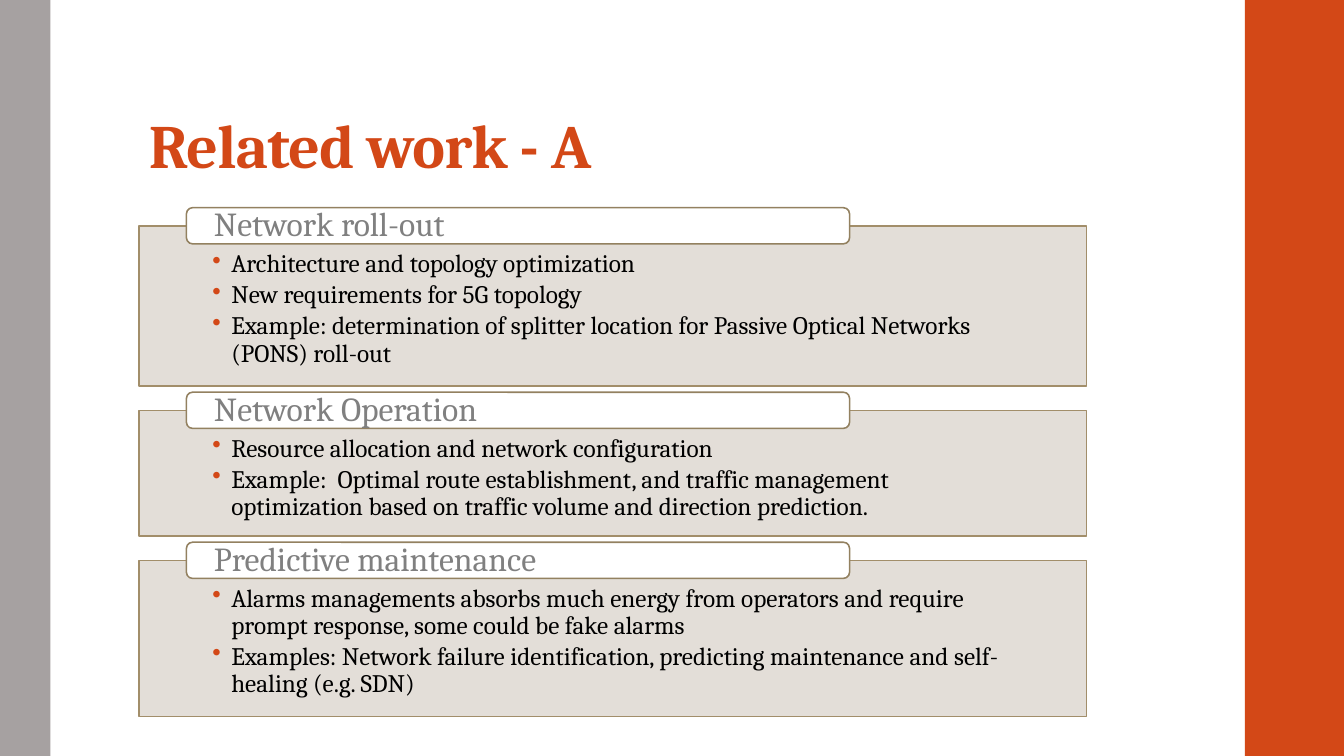
import dataclasses

import pptx
import pptx.dml.color
import pptx.enum.shapes
import pptx.enum.text
import pptx.oxml.ns
import pptx.util
from lxml import etree

Cm = pptx.util.Cm
Pt = pptx.util.Pt
RGB = pptx.dml.color.RGBColor.from_string
SHAPE = pptx.enum.shapes.MSO_SHAPE
ANCHOR = pptx.enum.text.MSO_ANCHOR
qn = pptx.oxml.ns.qn


@dataclasses.dataclass(frozen=True)
class Theme:
    font: str = "Cambria"
    accent: str = "D34817"
    side_band: str = "A6A1A1"
    card: str = "E0DBD4"
    card_line: str = "A28E6A"
    tab: str = "FFFFFF"
    tab_line: str = "938160"
    heading: str = "808080"
    body: str = "000000"
    title_size: float = 44
    heading_size: float = 24
    body_size: float = 18
    line_width: float = 1.1


theme = Theme()


def add_panel(kind, left, top, width, height, fill, line=None):
    panel = slide.shapes.add_shape(kind, Cm(left), Cm(top), Cm(width), Cm(height))
    panel.shadow.inherit = False
    panel.fill.solid()
    panel.fill.fore_color.rgb = RGB(fill)
    if line:
        panel.line.color.rgb = RGB(line)
        panel.line.width = Pt(theme.line_width)
    else:
        panel.line.fill.background()
    return panel


def write_line(paragraph, text, size, color):
    paragraph.alignment = pptx.enum.text.PP_ALIGN.LEFT
    paragraph.line_spacing = 0.9
    run = paragraph.add_run()
    run.text = text
    run.font.name = theme.font
    run.font.size = Pt(size)
    run.font.color.rgb = RGB(color)
    return run


topics = [
    ("Network roll-out", 4.04, [
        "Architecture and topology optimization",
        "New requirements for 5G topology",
        "Example: determination of splitter location for Passive Optical Networks (PONS) roll-out",
    ]),
    ("Network Operation", 3.17, [
        "Resource allocation and network configuration",
        "Example:  Optimal route establishment, and traffic management optimization "
        "based on traffic volume and direction prediction.",
    ]),
    ("Predictive maintenance", 3.94, [
        "Alarms managements absorbs much energy from operators and require prompt response, "
        "some could be fake alarms",
        "Examples: Network failure identification, predicting maintenance and self-healing (e.g. SDN)",
    ]),
]

prs = pptx.Presentation()
prs.slide_width, prs.slide_height = Cm(33.87), Cm(19.05)
slide = prs.slides.add_slide(prs.slide_layouts[5])

# Side bands
add_panel(SHAPE.RECTANGLE, 31.37, 0, 2.5, 19.05, theme.accent)
add_panel(SHAPE.RECTANGLE, 0, 0, 1.27, 19.05, theme.side_band)

# Title
title = slide.shapes.title
title.left, title.top, title.width, title.height = Cm(3.5), Cm(0.81), Cm(26.92), Cm(3.89)
title_frame = title.text_frame
title_frame.auto_size = pptx.enum.text.MSO_AUTO_SIZE.NONE
title_frame.word_wrap = True
title_frame.vertical_anchor = ANCHOR.BOTTOM
title_frame.margin_left = title_frame.margin_right = Cm(0.25)
title_frame.margin_top, title_frame.margin_bottom = Cm(0.08), Cm(0.13)
title_run = write_line(title_frame.paragraphs[0], "Related work - A", theme.title_size, theme.accent)
title_run.font.bold = True
title_run.font._element.set("spc", "-50")

# Topic cards, each with a heading tab over its top edge
card_left, card_width, card_gap = 3.5, 23.88, 0.61
tab_height = 0.91
card_top = 5.69
for heading, card_height, points in topics:
    card = add_panel(SHAPE.RECTANGLE, card_left, card_top, card_width, card_height,
                     theme.card, theme.card_line)
    card_color = card._element.spPr.find(qn("a:solidFill"))[0]
    etree.SubElement(card_color, qn("a:alpha"), val="90000")
    card_frame = card.text_frame
    card_frame.word_wrap = True
    card_frame.vertical_anchor = ANCHOR.TOP
    card_frame.margin_left = card_frame.margin_right = Cm(1.85)
    card_frame.margin_top, card_frame.margin_bottom = Cm(0.64), Cm(0.36)
    for number, point in enumerate(points):
        paragraph = card_frame.add_paragraph() if number else card_frame.paragraphs[0]
        paragraph.level = 1
        props = paragraph._p.get_or_add_pPr()
        props.set("marL", str(Cm(0.48)))
        props.set("indent", str(-Cm(0.48)))
        bullet_color = etree.SubElement(props, qn("a:buClr"))
        etree.SubElement(bullet_color, qn("a:srgbClr"), val=theme.accent)
        etree.SubElement(props, qn("a:buChar"), char="•")
        paragraph.space_after = Pt(0.15 * theme.body_size)
        write_line(paragraph, point, theme.body_size, theme.body)

    tab = add_panel(SHAPE.ROUNDED_RECTANGLE, card_left + 1.2, card_top - tab_height / 2,
                    16.71, tab_height, theme.tab, theme.tab_line)
    tab_frame = tab.text_frame
    tab_frame.word_wrap = True
    tab_frame.vertical_anchor = ANCHOR.MIDDLE
    tab_frame.margin_left = tab_frame.margin_right = Cm(0.65)
    tab_frame.margin_top = tab_frame.margin_bottom = 0
    write_line(tab_frame.paragraphs[0], heading, theme.heading_size, theme.heading)

    card_top += card_height + card_gap

prs.save("out.pptx")
